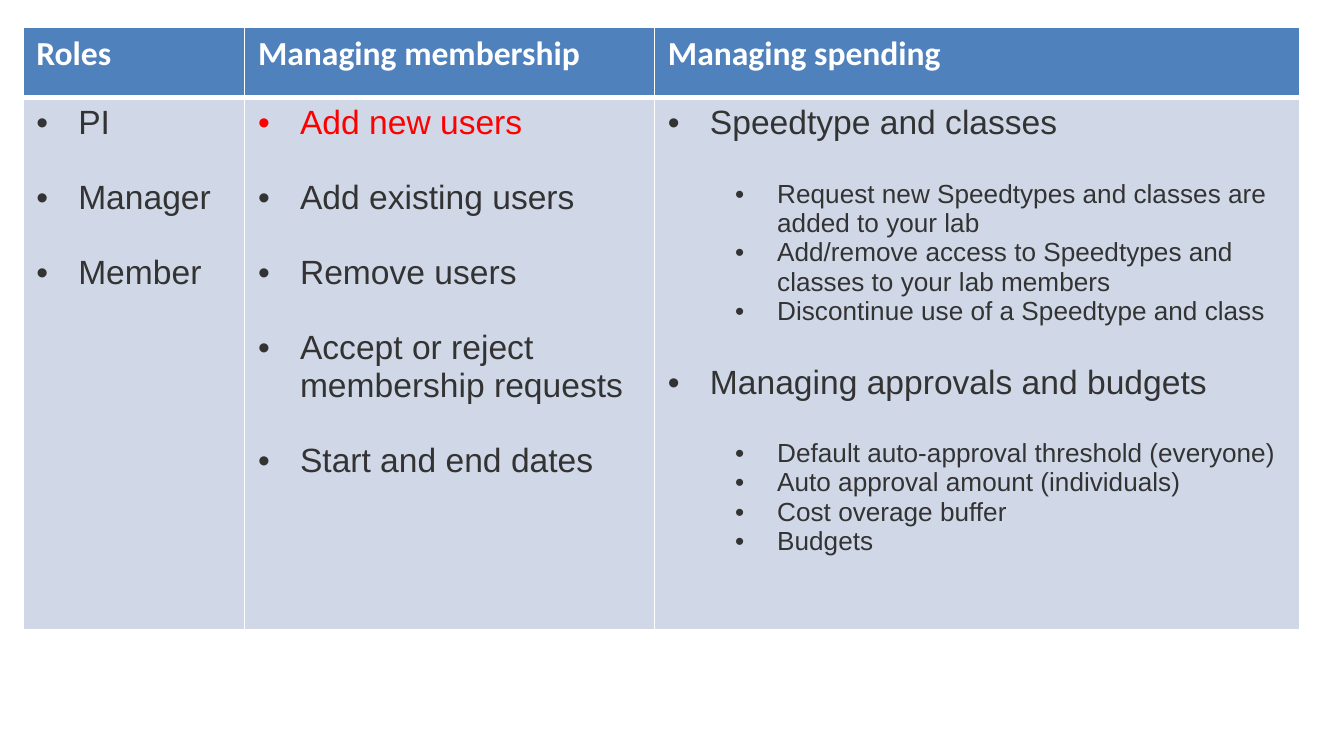
"""Build a slide with a table of lab roles, membership and spending tasks."""
from dataclasses import dataclass

from lxml.etree import SubElement
from pptx import Presentation
from pptx.dml.color import RGBColor as RGB
from pptx.oxml.ns import qn
from pptx.table import _Cell as Cell
from pptx.text.text import _Paragraph as Paragraph
from pptx.util import Pt

COLORS = {"header": "4F81BD", "body": "D0D8E8", "line": "FFFFFF",
          "title": "FFFFFF", "text": "333333", "alert": "FF0000"}
HEADER_FONT = {"name": "Calibri", "size": Pt(18), "bold": True}
LEVEL_FONTS = ({"name": "Arial", "size": Pt(18), "bold": False},
               {"name": "Arial", "size": Pt(14), "bold": False})
INDENTS = (22.5, 58.5)
HANGING = 22.5
GAP = 20
LEFT, TOP = 12.24, 14.4
ROW_HEIGHTS = (38, 285)


@dataclass
class Item:
    text: str
    level: int = 0
    gap: float = GAP
    color: str = "text"


@dataclass
class Column:
    title: str
    width: float
    items: list[Item]


def group(title: str, *tasks: str) -> list[Item]:
    """Return a heading item followed by its sub-items."""
    return [Item(title)] + [Item(t, 1, 0 if i else GAP) for i, t in enumerate(tasks)]


COLUMNS = [
    Column("Roles", 118.8, [Item("PI"), Item("Manager"), Item("Member")]),
    Column("Managing membership", 219.6, [
        Item("Add new users", color="alert"),
        Item("Add existing users"),
        Item("Remove users"),
        Item("Accept or reject membership requests"),
        Item("Start and end dates"),
    ]),
    Column("Managing spending", 345.6, [
        *group("Speedtype and classes",
               "Request new Speedtypes and classes are added to your lab",
               "Add/remove access to Speedtypes and classes to your lab members",
               "Discontinue use of a Speedtype and class"),
        *group("Managing approvals and budgets",
               "Default auto-approval threshold (everyone)",
               "Auto approval amount (individuals)",
               "Cost overage buffer",
               "Budgets"),
    ]),
]


def style_cell(cell: Cell, fill: str, top: float, bottom: float) -> None:
    """Give a cell its borders and fill."""
    tc_pr = cell._tc.get_or_add_tcPr()
    for side, width in {"L": 1, "R": 1, "T": top, "B": bottom}.items():
        ln = SubElement(tc_pr, qn(f"a:ln{side}"), w=str(Pt(width)))
        SubElement(SubElement(ln, qn("a:solidFill")), qn("a:srgbClr"), val=COLORS["line"])
    cell.fill.solid()
    cell.fill.fore_color.rgb = RGB.from_string(COLORS[fill])


def write(p: Paragraph, text: str, font: dict, color: str) -> None:
    """Add one formatted run to a paragraph."""
    r = p.add_run()
    r.text = text
    for name, value in font.items():
        setattr(r.font, name, value)
    r.font.color.rgb = RGB.from_string(COLORS[color])


def write_items(cell: Cell, items: list[Item]) -> None:
    """Fill a cell with bulleted items."""
    tf = cell.text_frame
    for i, item in enumerate(items):
        p = tf.add_paragraph() if i else tf.paragraphs[0]
        p.level = item.level
        p_pr = p._p.get_or_add_pPr()
        p_pr.set("marL", str(Pt(INDENTS[item.level])))
        p_pr.set("indent", str(-Pt(HANGING)))
        SubElement(p_pr, qn("a:buFont"), typeface="Arial")
        SubElement(p_pr, qn("a:buChar"), char="•")
        p.space_before = Pt(item.gap if i else 0)
        write(p, item.text, LEVEL_FONTS[item.level], item.color)


def main() -> None:
    """Build and save the slide."""
    prs = Presentation()
    prs.slide_width, prs.slide_height = Pt(720), Pt(405)
    s = prs.slides.add_slide(prs.slide_layouts[6])
    width = sum(c.width for c in COLUMNS)
    table = s.shapes.add_table(2, len(COLUMNS), Pt(LEFT), Pt(TOP),
                               Pt(width), Pt(sum(ROW_HEIGHTS))).table
    table.horz_banding = False
    for row, height in zip(table.rows, ROW_HEIGHTS):
        row.height = Pt(height)
    for i, column in enumerate(COLUMNS):
        table.columns[i].width = Pt(column.width)
        header, body = table.cell(0, i), table.cell(1, i)
        style_cell(header, "header", 1, 3)
        write(header.text_frame.paragraphs[0], column.title, HEADER_FONT, "title")
        style_cell(body, "body", 3, 1)
        write_items(body, column.items)
    prs.save("out.pptx")


if __name__ == "__main__":
    main()
